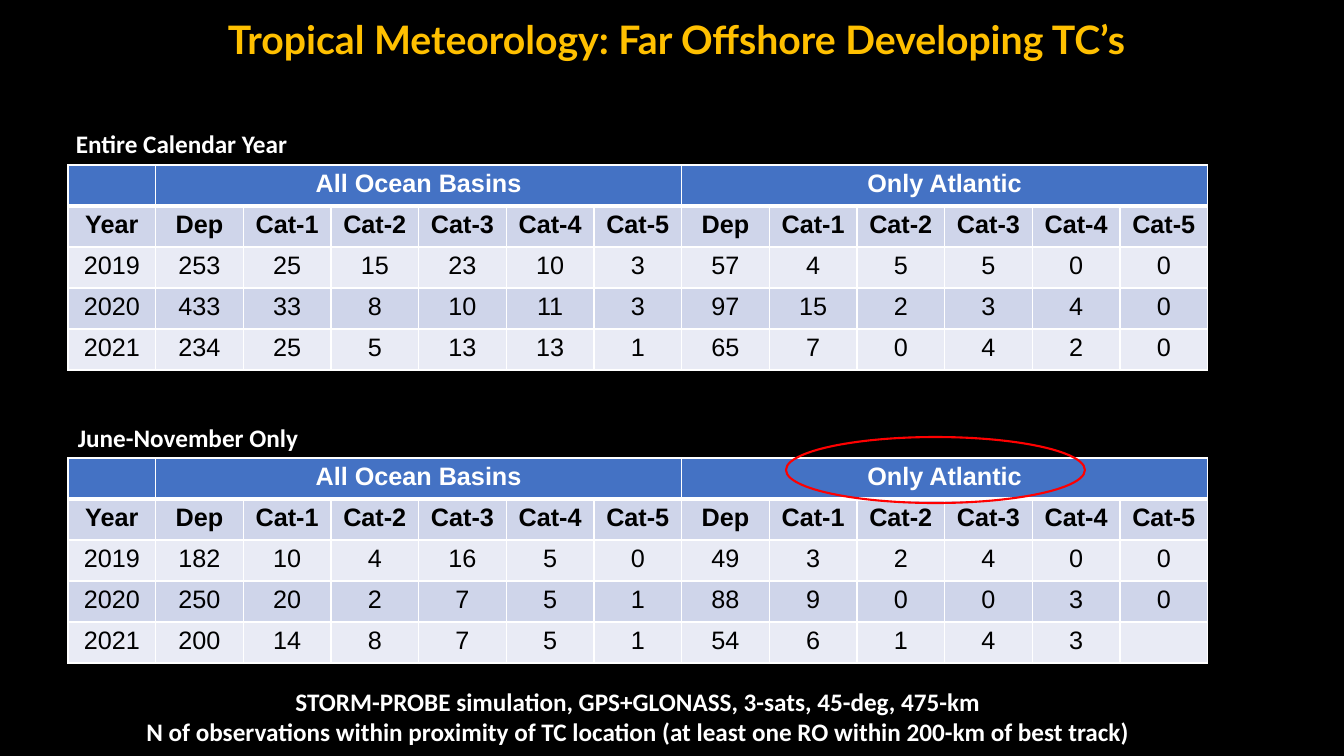
from lxml import etree
from pptx import Presentation, util as u
from pptx.dml.color import RGBColor
from pptx.enum import shapes, text
from pptx.oxml import ns

PX = 914400 / 100.8
COLORS = {
    "background": "000000", "white": "FFFFFF", "black": "000000",
    "gold": "FFC000", "red": "FF0000",
    "header": "4472C4", "band_dark": "CFD5EA", "band_light": "E9EBF5",
}
CENTER = text.PP_ALIGN.CENTER
LEFT = text.PP_ALIGN.LEFT


def write(tf, lines, align, color, **font):
    """Fill a text frame with one paragraph per line in a single format."""
    for i, line in enumerate(lines):
        p = tf.paragraphs[0] if i == 0 else tf.add_paragraph()
        p.alignment = align
        f = p.font
        if line:
            r = p.add_run()
            r.text = line
            f = r.font
        for name, value in font.items():
            setattr(f, name, value)
        f.color.rgb = RGBColor.from_string(COLORS[color])


def set_borders(cell, bottom):
    """Draw white 1 pt cell borders, with the bottom one in its own width."""
    tcPr = cell._tc.get_or_add_tcPr()
    for i, (side, width) in enumerate(zip("LRTB", (1, 1, 1, bottom))):
        ln = etree.Element(ns.qn(f"a:ln{side}"), w=str(u.Pt(width)))
        fill = etree.SubElement(ln, ns.qn("a:solidFill"))
        etree.SubElement(fill, ns.qn("a:srgbClr"), val=COLORS["white"])
        tcPr.insert(i, ln)


prs = Presentation()
prs.slide_width, prs.slide_height = round(1344 * PX), round(756 * PX)
s = prs.slides.add_slide(prs.slide_layouts[6])
s.background.fill.solid()
s.background.fill.fore_color.rgb = RGBColor.from_string(COLORS["background"])

# Tables
CATEGORIES = ["Dep", "Cat-1", "Cat-2", "Cat-3", "Cat-4", "Cat-5"]
HEADINGS = [
    ["", "All Ocean Basins"] + [""] * 5 + ["Only Atlantic"] + [""] * 5,
    ["Year"] + CATEGORIES * 2,
]
TABLES = [
    (165, [
        [2019, 253, 25, 15, 23, 10, 3, 57, 4, 5, 5, 0, 0],
        [2020, 433, 33, 8, 10, 11, 3, 97, 15, 2, 3, 4, 0],
        [2021, 234, 25, 5, 13, 13, 1, 65, 7, 0, 4, 2, 0],
    ]),
    (458, [
        [2019, 182, 10, 4, 16, 5, 0, 49, 3, 2, 4, 0, 0],
        [2020, 250, 20, 2, 7, 5, 1, 88, 9, 0, 0, 3, 0],
        [2021, 200, 14, 8, 7, 5, 1, 54, 6, 1, 4, 3, ""],
    ]),
]
TABLE_LEFT, TABLE_WIDTH, ROW_HEIGHT = 68, 1140, 41

for top, counts in TABLES:
    rows = HEADINGS + counts
    table = s.shapes.add_table(
        len(rows), len(rows[0]), round(TABLE_LEFT * PX), round(top * PX),
        round(TABLE_WIDTH * PX), round(ROW_HEIGHT * len(rows) * PX)).table
    for i, row in enumerate(rows):
        table.rows[i].height = round(ROW_HEIGHT * PX)
        fill = "header" if i == 0 else ("band_dark" if i % 2 else "band_light")
        for j, value in enumerate(row):
            cell = table.cell(i, j)
            cell.fill.solid()
            cell.fill.fore_color.rgb = RGBColor.from_string(COLORS[fill])
            set_borders(cell, 3 if i == 0 else 1)
            write(cell.text_frame, [str(value)], CENTER,
                  "white" if i == 0 else "black",
                  name="Arial", size=u.Pt(18), bold=i < 2)
    for first in (1, 7):
        table.cell(0, first).merge(table.cell(0, first + 5))

# Title, table labels and footnote
TEXTS = [
    ((88, 10, 1177, 57), ["Tropical Meteorology: Far Offshore Developing TC’s"],
     CENTER, "gold", "Lato", 28, True),
    ((66, 123, 234, 40), ["Entire Calendar Year"], LEFT, "white", "Calibri", 18, False),
    ((68, 417, 242, 40), ["June-November Only"], LEFT, "white", "Calibri", 18, False),
    ((135, 681, 1006, 72),
     ["STORM-PROBE simulation, GPS+GLONASS, 3-sats, 45-deg, 475-km",
      "N of observations within proximity of TC location "
      "(at least one RO within 200-km of best track)"],
     CENTER, "white", "Calibri", 18, False),
]
for box, lines, align, color, face, size, wrap in TEXTS:
    tf = s.shapes.add_textbox(*(round(v * PX) for v in box)).text_frame
    tf.word_wrap = wrap
    tf.auto_size = text.MSO_AUTO_SIZE.SHAPE_TO_FIT_TEXT
    write(tf, lines, align, color, name=face, size=u.Pt(size), bold=True)

# Ring around the Atlantic heading
ring = s.shapes.add_shape(shapes.MSO_SHAPE.OVAL,
                          *(round(v * PX) for v in (786, 437, 299, 66)))
ring.shadow.inherit = False
ring.fill.background()
ring.line.color.rgb = RGBColor.from_string(COLORS["red"])
ring.line.width = u.Pt(1.5)

prs.save("out.pptx")
